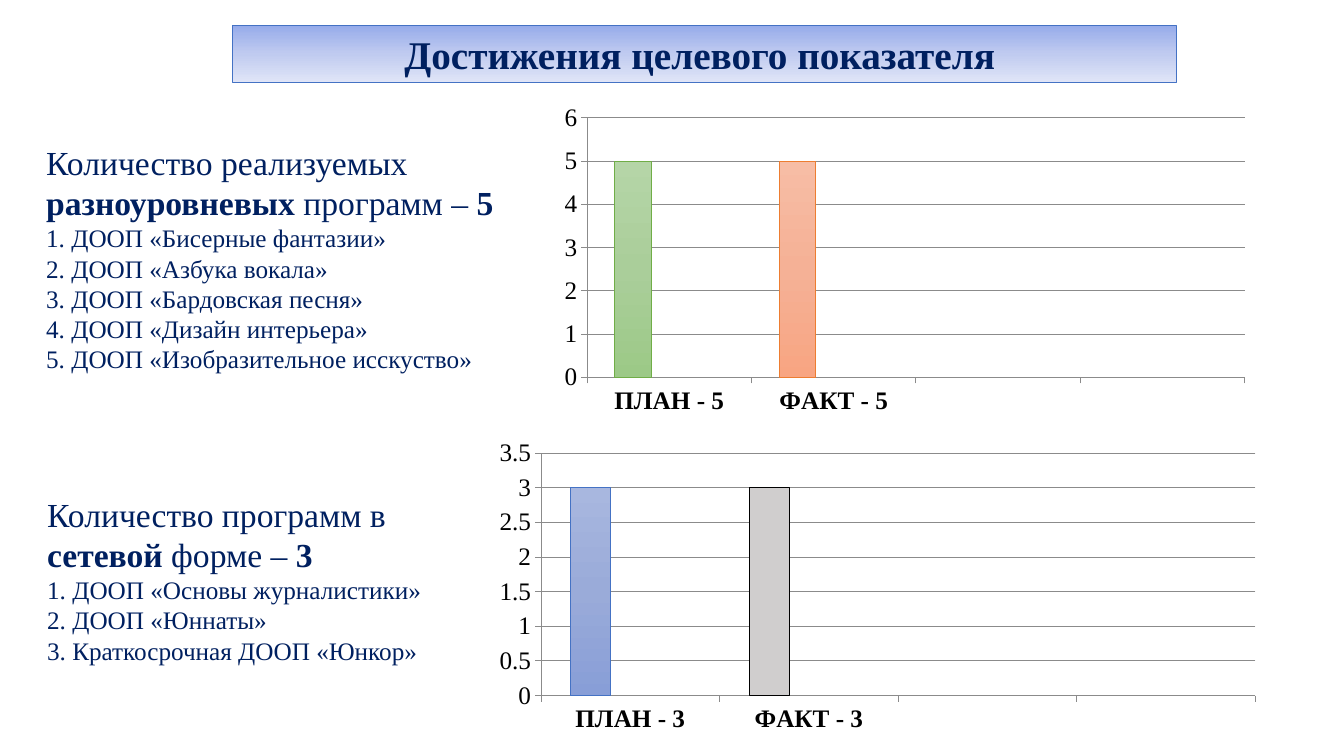
from copy import deepcopy

from pptx import Presentation
from pptx.chart.data import CategoryChartData
from pptx.dml.color import RGBColor
from pptx.enum.chart import XL_CHART_TYPE, XL_TICK_MARK
from pptx.enum.text import MSO_ANCHOR, MSO_AUTO_SIZE, PP_ALIGN
from pptx.util import Pt

SERIF = "Times New Roman"
COLORS = {
    "navy": "002060",
    "black": "000000",
    "axis": "8B8B8B",
    "blue": "4472C4",
    "green": "70AD47",
    "orange": "ED7D31",
    "gray": "A5A5A5",
    "light gray": "D0CECE",
}
GRADIENTS = {
    "title": ("96ABEA", "C0CBF0", "E0E5F7"),
    "green": ("B5D5A7", "AACE9A", "9CC987"),
    "orange": ("F7BDA5", "F5B196", "F8A582"),
    "blue": ("A8B7DF", "9AABD9", "889ED7"),
}


def color(name):
    return RGBColor.from_string(COLORS[name])


def paint(fill, name):
    """Fill with a top-to-bottom gradient if one has this name, else solid."""
    if name not in GRADIENTS:
        fill.solid()
        fill.fore_color.rgb = color(name)
        return
    fill.gradient()
    fill.gradient_angle = 270
    # A new gradient has two stops; the middle one is added between them
    first_stop = fill.gradient_stops[0]._gs
    first_stop.addnext(deepcopy(first_stop))
    for stop, position, rgb in zip(fill.gradient_stops, (0, 0.5, 1), GRADIENTS[name]):
        stop.position = position
        stop.color.rgb = RGBColor.from_string(rgb)


def draw_line(line, name, width=0.5):
    line.color.rgb = color(name)
    line.width = Pt(width)


def format_font(font, size, name="navy", bold=False, family=SERIF):
    font.name = family
    font.size = Pt(size)
    font.bold = bold
    font.color.rgb = color(name)


def add_title(slide, text, left, top, width, height):
    title = slide.shapes.title
    title.left, title.top, title.width, title.height = map(Pt, (left, top, width, height))
    paint(title.fill, "title")
    draw_line(title.line, "blue")
    text_frame = title.text_frame
    text_frame.text = text
    text_frame.auto_size = MSO_AUTO_SIZE.NONE
    text_frame.vertical_anchor = MSO_ANCHOR.MIDDLE
    paragraph = text_frame.paragraphs[0]
    paragraph.alignment = PP_ALIGN.CENTER
    format_font(paragraph.runs[0].font, 28, bold=True)


def add_program_list(slide, heading, programs, left, top, width, height):
    """Heading parts alternate between regular and bold."""
    box = slide.shapes.add_textbox(Pt(left), Pt(top), Pt(width), Pt(height))
    text_frame = box.text_frame
    text_frame.word_wrap = True
    text_frame.auto_size = MSO_AUTO_SIZE.SHAPE_TO_FIT_TEXT
    for index, part in enumerate(heading):
        run = text_frame.paragraphs[0].add_run()
        run.text = part
        format_font(run.font, 24, bold=index % 2 == 1)
    for number, program in enumerate(programs, 1):
        paragraph = text_frame.add_paragraph()
        paragraph.text = f"{number}. {program}"
        format_font(paragraph.runs[0].font, 18)


def add_plan_chart(slide, value, maximum, step, bars, left, top, width, height):
    """Plan and fact columns, with two free categories and two empty series."""
    data = CategoryChartData()
    data.categories = [f"ПЛАН - {value}", f"ФАКТ - {value}", "", ""]
    data.add_series("Series 1", (value, value, None, None))
    for name in ("Series 2", "Series 3"):
        data.add_series(name, (None,) * 4)
    chart = slide.shapes.add_chart(
        XL_CHART_TYPE.COLUMN_CLUSTERED, Pt(left), Pt(top), Pt(width), Pt(height), data
    ).chart
    chart.has_legend = False
    chart.has_title = False
    format_font(chart.font, 18, "black", family="Calibri")

    # Columns
    plot = chart.plots[0]
    plot.gap_width = 150
    plot.overlap = 0
    plot.vary_by_categories = False
    for series, name in zip(plot.series, ("orange", "orange", "gray")):
        paint_name = COLORS[name]
        series.format.fill.solid()
        series.format.fill.fore_color.rgb = RGBColor.from_string(paint_name)
    for index, (fill_name, line_name) in enumerate(bars):
        bar = plot.series[0].points[index].format
        paint(bar.fill, fill_name)
        draw_line(bar.line, line_name)

    # Axes
    for axis, bold in ((chart.category_axis, True), (chart.value_axis, False)):
        axis.major_tick_mark = XL_TICK_MARK.OUTSIDE
        axis.minor_tick_mark = XL_TICK_MARK.NONE
        format_font(axis.tick_labels.font, 18, "black", bold)
        draw_line(axis.format.line, "axis", 0.75)
    value_axis = chart.value_axis
    value_axis.minimum_scale = 0
    value_axis.maximum_scale = maximum
    value_axis.major_unit = step
    value_axis.has_major_gridlines = True
    draw_line(value_axis.major_gridlines.format.line, "axis", 0.75)


def main():
    presentation = Presentation()
    presentation.slide_width, presentation.slide_height = Pt(960), Pt(540)
    slide = presentation.slides.add_slide(presentation.slide_layouts[5])

    add_title(slide, "Достижения целевого показателя ", 166.3, 18, 674, 41)

    # Multi-level programs
    add_program_list(
        slide,
        ("Количество реализуемых ", "разноуровневых", " программ – ", "5"),
        (
            "ДООП «Бисерные фантазии»",
            "ДООП «Азбука вокала»",
            "ДООП «Бардовская песня»",
            "ДООП «Дизайн интерьера»",
            "ДООП «Изобразительное исскуство»",
        ),
        25.9, 97.9, 342.7, 203.8,
    )
    add_plan_chart(
        slide, 5, 6, 1, (("green", "green"), ("orange", "orange")),
        393.1, 69.8, 506.2, 231.1,
    )

    # Network programs
    add_program_list(
        slide,
        ("Количество программ в ", "сетевой", " форме – ", "3"),
        (
            "ДООП «Основы журналистики»",
            "ДООП «Юннаты»",
            "Краткосрочная ДООП «Юнкор»",
        ),
        26.6, 349.2, 301, 131,
    )
    add_plan_chart(
        slide, 3, 3.5, 0.5, (("blue", "blue"), ("light gray", "black")),
        345.6, 309.6, 562.3, 218.2,
    )

    presentation.save("out.pptx")


if __name__ == "__main__":
    main()
